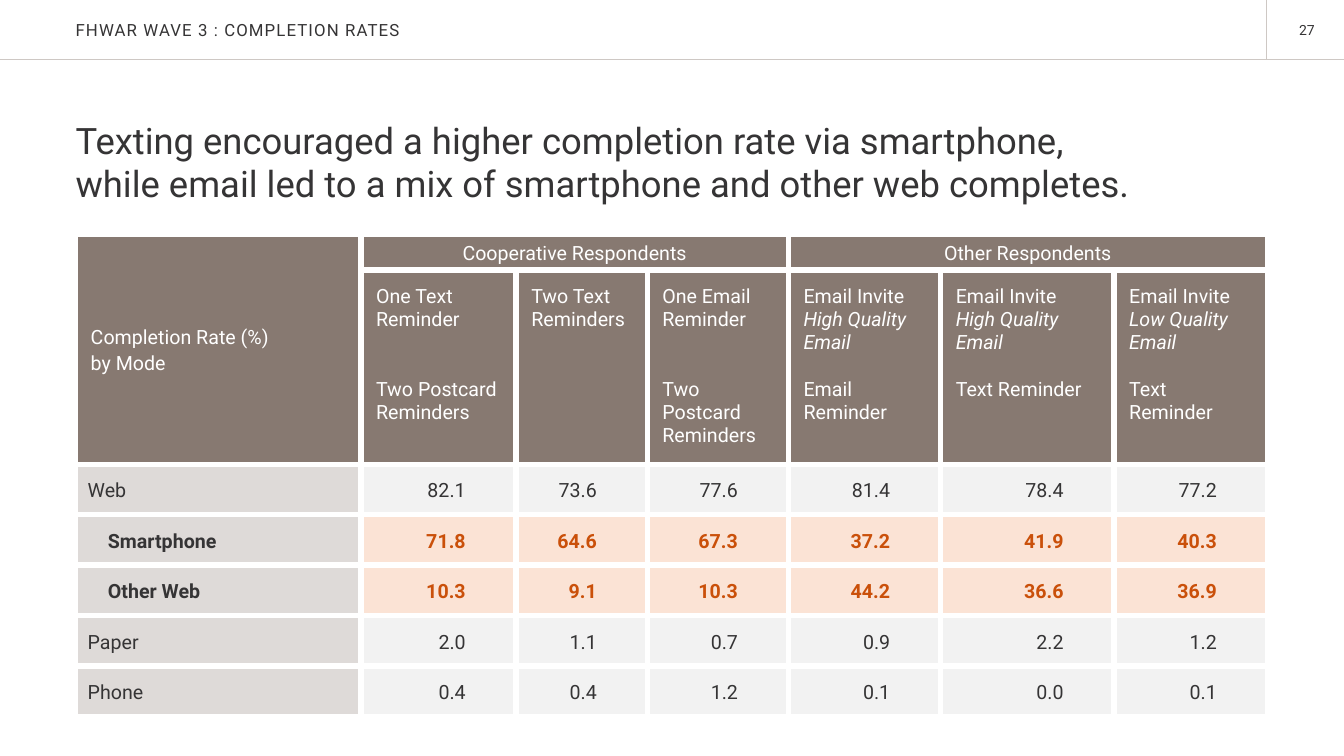
from lxml.etree import SubElement
from pptx import Presentation
from pptx.dml.color import RGBColor
from pptx.enum.shapes import MSO_CONNECTOR
from pptx.enum.text import MSO_ANCHOR, PP_ALIGN
from pptx.oxml.ns import qn
from pptx.util import Inches, Pt

INK = RGBColor(0x35, 0x34, 0x35)
WHITE = RGBColor(0xFF, 0xFF, 0xFF)
RULE = RGBColor(0xCE, 0xC8, 0xC4)
BROWN = RGBColor(0x87, 0x79, 0x71)
TAUPE = RGBColor(0xDE, 0xDA, 0xD8)
GRAY = RGBColor(0xF2, 0xF2, 0xF2)
PEACH = RGBColor(0xFB, 0xE3, 0xD5)
RUST = RGBColor(0xCA, 0x50, 0x0A)

FONT = "Roboto"
LINE = 16.5  # height in points of one line of header text
WIDTHS = [2.83, 1.54, 1.3, 1.4, 1.51, 1.72, 1.52]
HEIGHTS = [0.36, 1.45] + [0.5] * 5

# Each line of a header: text, blank lines above it, italic
HEADERS = [
    [("One Text Reminder", 0, False), ("Two Postcard Reminders", 2, False)],
    [("Two Text Reminders", 0, False)],
    [("One Email Reminder", 0, False), ("Two Postcard Reminders", 2, False)],
    [("Email Invite", 0, False), ("High Quality Email", 0, True),
     ("Email Reminder", 1, False)],
    [("Email Invite", 0, False), ("High Quality Email", 0, True),
     ("Text Reminder", 1, False)],
    [("Email Invite", 0, False), ("Low Quality Email", 0, True),
     ("Text Reminder", 1, False)],
]

# Mode, whether it is a highlighted kind of web response, rates
MODES = [
    ("Web", False, ["82.1", "73.6", "77.6", "81.4", "78.4", "77.2"]),
    ("Smartphone", True, ["71.8", "64.6", "67.3", "37.2", "41.9", "40.3"]),
    ("Other Web", True, ["10.3", "9.1", "10.3", "44.2", "36.6", "36.9"]),
    ("Paper", False, ["2.0", "1.1", "0.7", "0.9", "2.2", "1.2"]),
    ("Phone", False, ["0.4", "0.4", "1.2", "0.1", "0.0", "0.1"]),
]


def style(para, size, color, bold=False, italic=False):
    for run in para.runs:
        font = run.font
        font.name, font.size = FONT, Pt(size)
        font.bold, font.italic = bold, italic
        font.color.rgb = color


def add_text(slide, text, box, size, anchor=MSO_ANCHOR.TOP,
             align=PP_ALIGN.LEFT):
    shape = slide.shapes.add_textbox(*[Inches(n) for n in box])
    frame = shape.text_frame
    frame.word_wrap = True
    frame.vertical_anchor = anchor
    frame.margin_left = frame.margin_right = 0
    frame.margin_top = frame.margin_bottom = 0
    frame.text = text
    para = frame.paragraphs[0]
    para.alignment = align
    style(para, size, INK)
    return para


def add_rule(slide, *ends):
    line = slide.shapes.add_connector(
        MSO_CONNECTOR.STRAIGHT, *[Inches(n) for n in ends])
    line.line.color.rgb = RULE
    line.line.width = Pt(0.65)
    SubElement(line._element.spPr, qn("a:effectLst"))


def add_borders(cell):
    props = cell._tc.get_or_add_tcPr()
    for side in ("a:lnL", "a:lnR", "a:lnT", "a:lnB"):
        edge = SubElement(props, qn(side), w=str(Pt(4.5)))
        fill = SubElement(edge, qn("a:solidFill"))
        SubElement(fill, qn("a:srgbClr"), val=str(WHITE))


def paint(cell, fill, left=0.08, right=0.08, edge=0,
          anchor=MSO_ANCHOR.MIDDLE):
    """Set the fill, insets and anchor of a cell."""
    cell.fill.solid()
    cell.fill.fore_color.rgb = fill
    cell.margin_left, cell.margin_right = Inches(left), Inches(right)
    cell.margin_top = cell.margin_bottom = Inches(edge)
    cell.vertical_anchor = anchor


def write(cell, text, color, align=PP_ALIGN.LEFT, bold=False):
    para = cell.text_frame.paragraphs[0]
    para.text = text
    para.alignment = align
    para.line_spacing = 1.15
    style(para, 14, color, bold)


def write_header(cell, lines):
    paint(cell, BROWN, 0.15, 0.15, 0.15, MSO_ANCHOR.TOP)
    frame = cell.text_frame
    for i, (text, gap, italic) in enumerate(lines):
        para = frame.add_paragraph() if i else frame.paragraphs[0]
        para.text = text
        if gap:
            para.space_before = Pt(gap * LINE)
        style(para, 14, WHITE, italic=italic)


def write_mode(table, row, name, accent, rates):
    label = table.cell(row, 0)
    paint(label, TAUPE, left=0.32 if accent else 0.12)
    write(label, name, INK, bold=accent)
    for col, rate in enumerate(rates, 1):
        cell = table.cell(row, col)
        paint(cell, PEACH if accent else GRAY, right=0.5)
        write(cell, rate, RUST if accent else INK, PP_ALIGN.RIGHT, accent)


def add_rates(slide):
    frame = slide.shapes.add_table(
        len(HEIGHTS), len(WIDTHS), Inches(0.75), Inches(2.32),
        Inches(sum(WIDTHS)), Inches(sum(HEIGHTS)))
    table = frame.table
    table.first_row = table.horz_banding = False
    for col, width in zip(table.columns, WIDTHS):
        col.width = Inches(width)
    for row, height in zip(table.rows, HEIGHTS):
        row.height = Inches(height)
    for cell in table.iter_cells():
        add_borders(cell)

    corner = table.cell(0, 0)
    corner.merge(table.cell(1, 0))
    paint(corner, BROWN, left=0.15)
    write(corner, "Completion Rate (%)\vby Mode", WHITE)
    for col, name in ((1, "Cooperative Respondents"),
                      (4, "Other Respondents")):
        group = table.cell(0, col)
        group.merge(table.cell(0, col + 2))
        paint(group, BROWN)
        write(group, name, WHITE, PP_ALIGN.CENTER)
    for col, lines in enumerate(HEADERS, 1):
        write_header(table.cell(1, col), lines)
    for row, mode in enumerate(MODES, 2):
        write_mode(table, row, *mode)


def main():
    deck = Presentation()
    deck.slide_width, deck.slide_height = Inches(13.33), Inches(7.5)
    slide = deck.slides.add_slide(deck.slide_layouts[6])
    add_text(slide, "27", (12.64, 0.21, 0.4, 0.17), 10,
             align=PP_ALIGN.RIGHT)
    add_rule(slide, 0, 0.59, 13.33, 0.59)
    add_rule(slide, 12.56, 0, 12.56, 0.59)
    title = add_text(slide, "FHWAR WAVE 3 : COMPLETION RATES",
                     (0.75, 0, 8.19, 0.6), 12, MSO_ANCHOR.MIDDLE)
    title.runs[0].font._element.set("spc", "80")
    add_text(slide, "Texting encouraged a higher completion rate via "
             "smartphone, while email led to a mix of smartphone and other "
             "web completes.", (0.75, 1.17, 10.7, 1), 26)
    add_rates(slide)
    deck.save("out.pptx")


if __name__ == "__main__":
    main()
